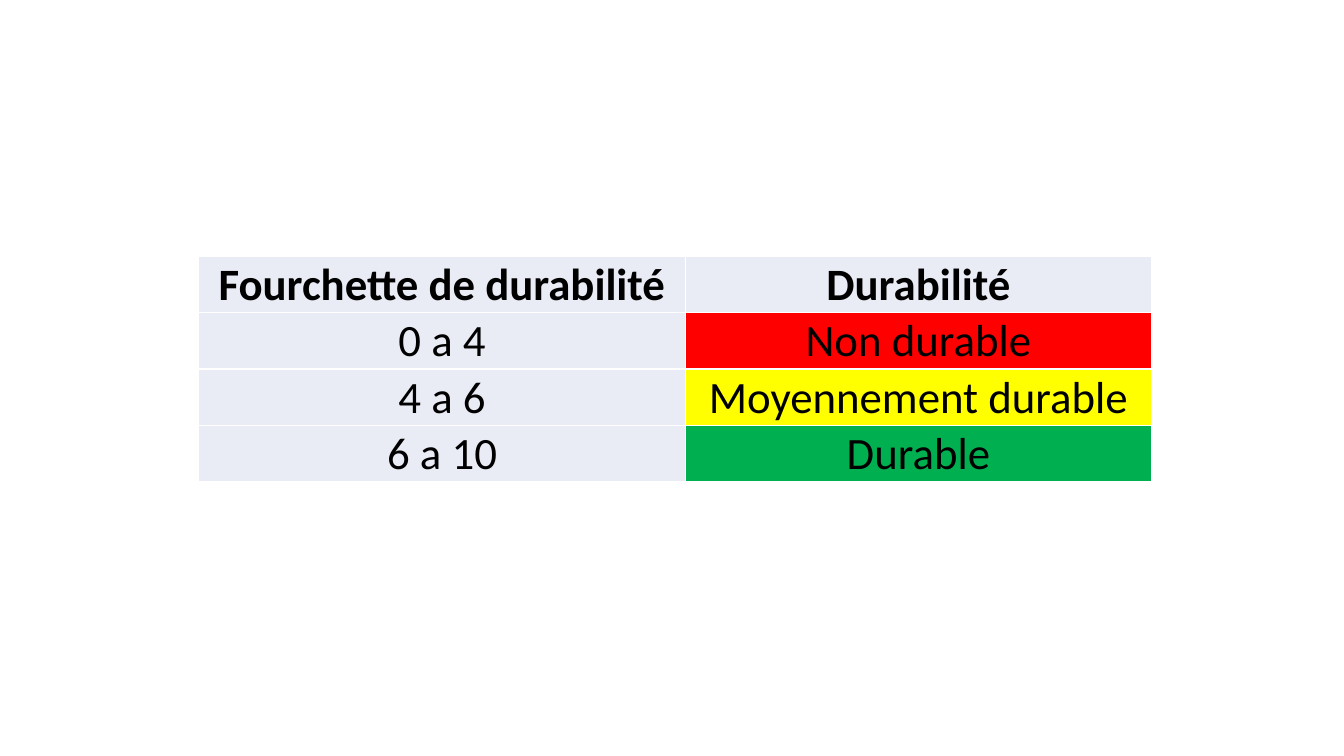
from lxml import etree
from pptx import Presentation
from pptx.dml.color import RGBColor
from pptx.enum.text import MSO_ANCHOR, PP_ALIGN
from pptx.oxml.ns import qn
from pptx.util import Inches, Pt

CENTER, BOTTOM = PP_ALIGN.CENTER, MSO_ANCHOR.BOTTOM

# Content: each row holds two texts and the colour of its rating
ROWS = [
    ("Fourchette de durabilité", "Durabilité", "pale"),
    ("0 a 4", "Non durable", "red"),
    ("4 a 6", "Moyennement durable", "yellow"),
    ("6 a 10", "Durable", "green"),
]
COLORS = {"pale": "E9EBF5", "red": "FF0000", "yellow": "FFFF00",
          "green": "00B050", "text": "000000", "border": "FFFFFF"}
LEFT, TOP = 1.97, 2.54
COL_WIDTHS = [4.83, 4.62]
ROW_HEIGHT = 0.56
FONT = {"name": "Calibri", "size": Pt(32)}
CELL = {"vertical_anchor": BOTTOM, "margin_left": Inches(0.01),
        "margin_right": Inches(0.01), "margin_top": Inches(0.01),
        "margin_bottom": 0}


def rgb(name):
    return RGBColor.from_string(COLORS[name])


def add_borders(cell):
    tcPr = cell._tc.get_or_add_tcPr()
    for i, side in enumerate(("lnL", "lnR", "lnT", "lnB")):
        ln = etree.Element(qn(f"a:{side}"), w=str(Pt(1)))
        fill = etree.SubElement(ln, qn("a:solidFill"))
        etree.SubElement(fill, qn("a:srgbClr"), val=COLORS["border"])
        tcPr.insert(i, ln)


def fill_cell(cell, text, color, bold):
    for key, value in CELL.items():
        setattr(cell, key, value)
    cell.fill.solid()
    cell.fill.fore_color.rgb = rgb(color)
    add_borders(cell)
    p = cell.text_frame.paragraphs[0]
    p.alignment = CENTER
    r = p.add_run()
    r.text = text
    for key, value in FONT.items():
        setattr(r.font, key, value)
    r.font.bold = bold
    r.font.color.rgb = rgb("text")


prs = Presentation()
prs.slide_width, prs.slide_height = Inches(13.33), Inches(7.5)
s = prs.slides.add_slide(prs.slide_layouts[6])

# Durability table
table = s.shapes.add_table(
    len(ROWS), len(COL_WIDTHS), Inches(LEFT), Inches(TOP),
    Inches(sum(COL_WIDTHS)), Inches(ROW_HEIGHT * len(ROWS))).table
table.first_row = table.horz_banding = False
for column, width in zip(table.columns, COL_WIDTHS):
    column.width = Inches(width)
for i, (score, rating, color) in enumerate(ROWS):
    table.rows[i].height = Inches(ROW_HEIGHT)
    fill_cell(table.cell(i, 0), score, "pale", i == 0)
    fill_cell(table.cell(i, 1), rating, color, i == 0)

prs.save("out.pptx")
